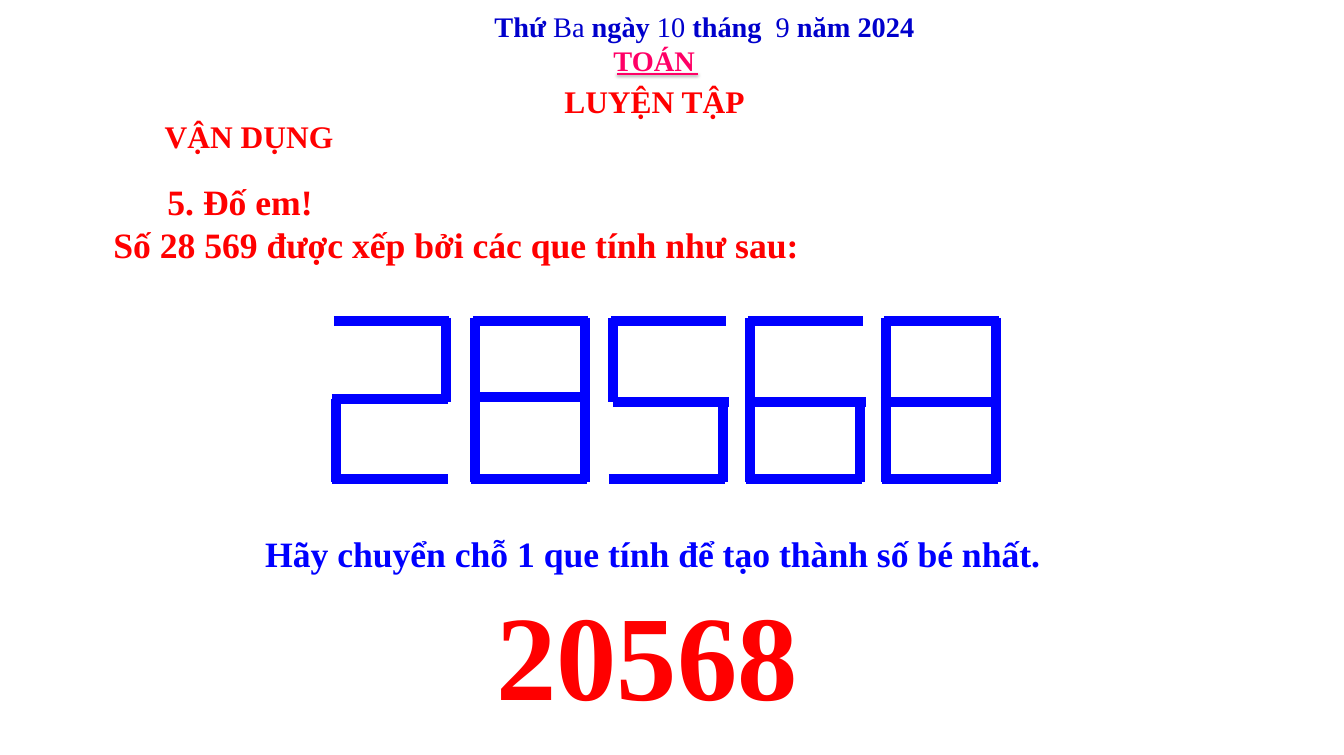
"""Build a maths slide with a number laid out in counting sticks."""
from lxml.etree import SubElement
from pptx import Presentation
from pptx.dml.color import RGBColor
from pptx.enum.shapes import MSO_CONNECTOR
from pptx.enum.text import PP_ALIGN
from pptx.oxml.ns import qn
from pptx.util import Pt

PX = 914400 / 75.5
FONT = "Times New Roman"
RED, BLUE, NAVY, PINK = "FF0000", "0000FF", "0000CC", "FF0066"
LEFT, MID, JUST = PP_ALIGN.LEFT, PP_ALIGN.CENTER, PP_ALIGN.JUSTIFY

deck = Presentation()
deck.slide_width, deck.slide_height = round(1344 * PX), round(755 * PX)
slide = deck.slides.add_slide(deck.slide_layouts[6])


def write(box, paras, size, color, align=MID, wrap=False):
    shape = slide.shapes.add_textbox(*[round(n * PX) for n in box])
    frame = shape.text_frame
    frame.word_wrap = wrap
    for i, (indent, runs) in enumerate(paras):
        para = frame.paragraphs[0] if i == 0 else frame.add_paragraph()
        para.alignment = align
        if indent:
            para._p.get_or_add_pPr().set("indent", str(round(indent * PX)))
        for words, bold in runs:
            run = para.add_run()
            run.text = words
            run.font.name, run.font.size, run.font.bold = FONT, Pt(size), bold
            run.font.color.rgb = RGBColor.from_string(color)


def draw(ends, color, width):
    line = slide.shapes.add_connector(MSO_CONNECTOR.STRAIGHT, *[round(n * PX) for n in ends])
    line.line.color.rgb = RGBColor.from_string(color)
    line.line.width = Pt(width)
    return SubElement(line._element.spPr, qn("a:effectLst"))


date = [("Thứ", True), (" Ba ", False), ("ngày", True), (" 10 ", False),
        ("tháng", True), ("  9 ", False), ("năm 2024", True)]
write((487, 5, 439, 42), [(0, date)], 27, NAVY, LEFT)
write((606, 39, 97, 42), [(0, [("TOÁN", True)])], 27, PINK, LEFT)

effect = draw((617, 74, 698, 74), PINK, 2)
shade = SubElement(effect, qn("a:outerShdw"), blurRad=str(Pt(3.1)), dist=str(Pt(1.6)),
                   dir="5400000", rotWithShape="0")
black = SubElement(shade, qn("a:srgbClr"), val="000000")
SubElement(black, qn("a:alpha"), val="38000")

write((556, 78, 197, 46), [(0, [("LUYỆN TẬP", True)])], 30, RED)
write((156, 113, 186, 46), [(0, [("VẬN DỤNG", True)])], 30, RED)
quiz = [(54, [("5. Đố em!", True)]),
        (0, [("Số 28 569 được xếp bởi các que tính như sau:", True)])]
write((106, 176, 1189, 94), quiz, 34, RED, JUST, True)
task = [(0, [("Hãy chuyển chỗ 1 que tính để tạo thành số bé nhất.", True)])]
write((156, 528, 994, 51), task, 34, BLUE, MID, True)

sticks = {
    "top": (-2, 321, 113, 321), "base": (-4, 479, 112, 479),
    "upleft": (0, 318, 0, 402), "upright": (110, 318, 110, 402),
    "lowleft": (0, 399, 0, 482), "lowright": (110, 399, 110, 482),
}
digits = [
    (336, -4, 399, ["upright", "lowleft"]),
    (475, -4, 397, ["upleft", "upright", "lowleft", "lowright"]),
    (613, 0, 402, ["upleft", "lowright"]),
    (750, 0, 402, ["upleft", "lowleft", "lowright"]),
    (886, -5, 402, ["upleft", "upright", "lowleft", "lowright"]),
]
for left, shift, mid, sides in digits:
    bars = [sticks[name] for name in ["top", "base"] + sides]
    bars.append((shift, mid, shift + 116, mid))
    for x1, y1, x2, y2 in bars:
        draw((left + x1, y1, left + x2, y2), BLUE, 10)

write((487, 576, 320, 154), [(0, [("20568", True)])], 115, RED)

deck.save("out.pptx")
